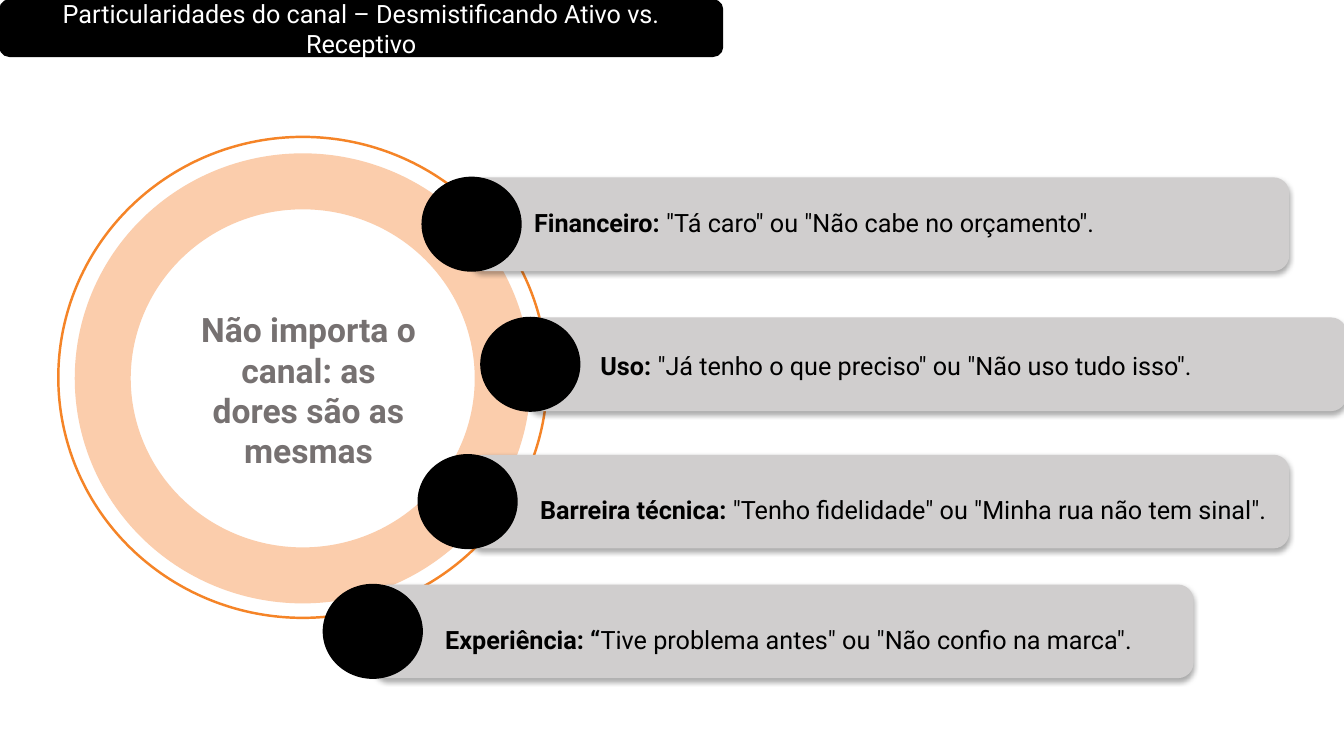
from lxml import etree
from pptx import Presentation
from pptx.dml.color import RGBColor
from pptx.enum import shapes, text
from pptx.oxml.ns import qn
from pptx.util import Cm, Pt

COLORS = {"black": "000000", "white": "FFFFFF", "bar": "D0CECE",
          "ring": "FBCDAC", "rim": "F58427", "message": "767171"}
FONT = "Roboto"

TITLE = "Particularidades do canal – Desmistificando Ativo vs. Receptivo"
MESSAGE = "Não importa o canal: as dores são as mesmas"
# heading, quotes, row top, disc left, bar left, label left, label top (cm)
OBJECTIONS = [
    ("Financeiro: ", '"Tá caro" ou "Não cabe no orçamento".',
     4.47, 10.64, 11.81, 13.21, 5.11),
    ("Uso: ", '"Já tenho o que preciso" ou "Não uso tudo isso".',
     8.0, 12.12, 13.26, 14.88, 8.71),
    ("Barreira técnica: ", '"Tenho fidelidade" ou "Minha rua não tem sinal".',
     11.46, 10.54, 11.81, 13.36, 12.34),
    ("Experiência: “", 'Tive problema antes" ou "Não confio na marca".',
     14.73, 8.15, 9.4, 10.97, 15.6),
]
ROW_HEIGHT, BAR_WIDTH, DISC_WIDTH = 2.36, 20.68, 2.49
LABEL_WIDTH, LABEL_HEIGHT = 27.38, 1.02
# left, top, width, height (cm), line colour, line width (pt)
RINGS = [(2.59, 4.57, 10.08, 9.93, "ring", 40),
         (1.47, 3.45, 12.32, 12.12, "rim", 1.75)]

OVAL = shapes.MSO_SHAPE.OVAL
ROUNDED = shapes.MSO_SHAPE.ROUNDED_RECTANGLE


def rgb(name):
    return RGBColor.from_string(COLORS[name])


def add_outline(slide, kind, box, fill=None, line=None, line_width=1):
    shape = slide.shapes.add_shape(kind, *map(Cm, box))
    shape.shadow.inherit = False
    if fill:
        shape.fill.solid()
        shape.fill.fore_color.rgb = rgb(fill)
    else:
        shape.fill.background()
    if line:
        shape.line.color.rgb = rgb(line)
        shape.line.width = Pt(line_width)
    else:
        shape.line.fill.background()
    return shape


def add_drop_shadow(shape):
    effects = shape._element.spPr.find(qn("a:effectLst"))
    shadow = etree.SubElement(effects, qn("a:outerShdw"), blurRad=str(Pt(3.5)),
                              dist=str(Pt(2.2)), dir="5400000", rotWithShape="0")
    black = etree.SubElement(shadow, qn("a:srgbClr"), val=COLORS["black"])
    etree.SubElement(black, qn("a:alpha"), val="32000")


def write(frame, parts, size, color, align=text.PP_ALIGN.LEFT):
    """Fill the frame with one paragraph of (wording, bold) parts."""
    frame.word_wrap = True
    paragraph = frame.paragraphs[0]
    paragraph.alignment = align
    for wording, bold in parts:
        run = paragraph.add_run()
        run.text = wording
        run.font.name = FONT
        run.font.size = Pt(size)
        run.font.bold = bold
        run.font.color.rgb = rgb(color)


def add_objection(slide, heading, quotes, top, disc_left, bar_left, label_left, label_top):
    bar = add_outline(slide, ROUNDED, (bar_left, top, BAR_WIDTH, ROW_HEIGHT), "bar")
    add_drop_shadow(bar)
    add_outline(slide, OVAL, (disc_left, top, DISC_WIDTH, ROW_HEIGHT), "black", "black")
    label = slide.shapes.add_textbox(
        *map(Cm, (label_left, label_top, LABEL_WIDTH, LABEL_HEIGHT)))
    write(label.text_frame, [(heading, True), (quotes, False)], 18, "black")


def main():
    deck = Presentation()
    deck.slide_width, deck.slide_height = Cm(33.87), Cm(19.05)
    slide = deck.slides.add_slide(deck.slide_layouts[6])

    for *box, color, width in RINGS:
        add_outline(slide, OVAL, box, line=color, line_width=width)
    message = slide.shapes.add_textbox(Cm(4.7), Cm(7.67), Cm(6.15), Cm(3.33))
    write(message.text_frame, [(MESSAGE, True)], 24, "message", text.PP_ALIGN.CENTER)

    for objection in OBJECTIONS:
        add_objection(slide, *objection)

    title = add_outline(slide, ROUNDED, (0, 0, 18.21, 1.42), "black", "black")
    title.text_frame.vertical_anchor = text.MSO_ANCHOR.MIDDLE
    write(title.text_frame, [(TITLE, False)], 18, "white", text.PP_ALIGN.CENTER)

    deck.save("out.pptx")


if __name__ == "__main__":
    main()
